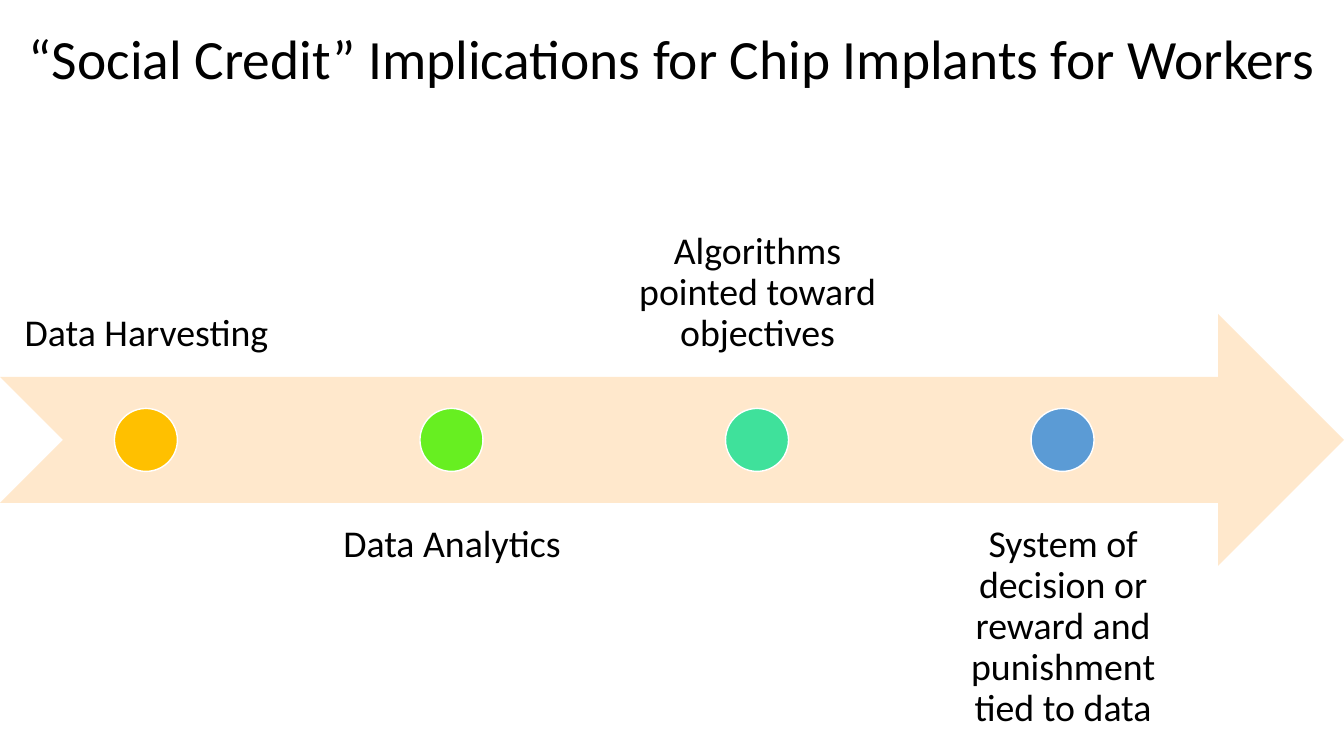
from pptx import Presentation
from pptx import util as u
from pptx.dml.color import RGBColor
from pptx.enum import shapes, text

PX = 9525
FONT = "Calibri"
STAGES = [
    ("Data Harvesting", "FFC000"),
    ("Data Analytics", "67EF21"),
    ("Algorithms pointed toward objectives", "3FE19B"),
    ("System of decision or reward and punishment tied to data", "5B9BD5"),
]


def px(*lengths):
    return [u.Emu(length * PX) for length in lengths]


def color(value):
    return RGBColor.from_string(value)


def write(frame, words, size, anchor):
    frame.word_wrap = True
    frame.auto_size = text.MSO_AUTO_SIZE.NONE
    frame.vertical_anchor = anchor
    para = frame.paragraphs[0]
    para.alignment = text.PP_ALIGN.CENTER
    para.line_spacing = 0.9
    span = para.add_run()
    span.text = words
    span.font.name = FONT
    span.font.size = u.Pt(size)
    span.font.color.rgb = color("000000")


def add_filled(group, preset, box, fill):
    shape = group.shapes.add_shape(preset, *px(*box))
    shape.shadow.inherit = False
    shape.fill.solid()
    shape.fill.fore_color.rgb = color(fill)
    shape.line.fill.background()
    return shape


def add_title(page, box, words):
    title = page.shapes.title
    title.left, title.top, title.width, title.height = px(*box)
    write(title.text_frame, words, 39.6, text.MSO_ANCHOR.MIDDLE)


def add_label(group, box, words, anchor):
    frame = group.shapes.add_textbox(*px(*box)).text_frame
    inset, = px(20)
    frame.margin_left = frame.margin_right = inset
    frame.margin_top = frame.margin_bottom = inset
    write(frame, words, 27, anchor)


def add_timeline(page, box, stages):
    """Draw an arrow with dots, labelled above and below in turn."""
    left, top, width, height = box
    band = height * 2 // 5
    label_width, step, dot = 277, 291, 60
    group = page.shapes.add_group_shape()
    add_filled(group, shapes.MSO_SHAPE.NOTCHED_RIGHT_ARROW,
               (left, top + (height - band) // 2, width, band), "FFE8CC")
    for index, (words, fill) in enumerate(stages):
        x = left + 1 + index * step
        if index % 2:
            y, anchor = top + height - band, text.MSO_ANCHOR.TOP
        else:
            y, anchor = top, text.MSO_ANCHOR.BOTTOM
        add_label(group, (x, y, label_width, band), words, anchor)
        marker = add_filled(
            group, shapes.MSO_SHAPE.OVAL,
            (x + (label_width - dot) // 2, top + (height - dot) // 2, dot, dot),
            fill)
        marker.line.color.rgb = color("FFFFFF")
        marker.line.width = u.Pt(1)


def main():
    deck = Presentation()
    deck.slide_width, deck.slide_height = px(1280, 720)
    page = deck.slides.add_slide(deck.slide_layouts[5])
    add_title(page, (0, 0, 1280, 117),
              "“Social Credit” Implications for Chip Implants for Workers")
    add_timeline(page, (0, 118, 1280, 602), STAGES)
    deck.save("out.pptx")


if __name__ == "__main__":
    main()
